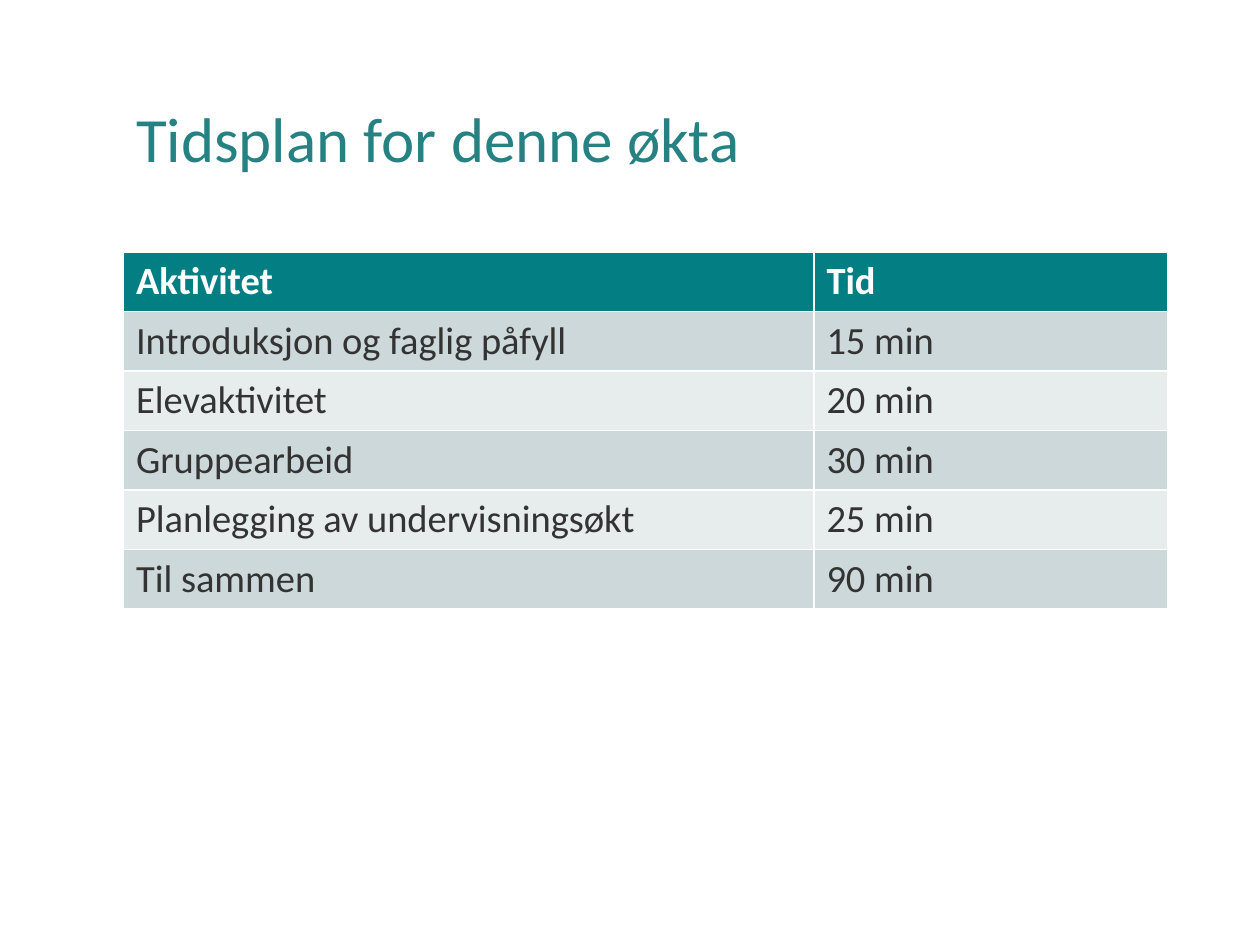
from pptx import Presentation
from pptx.dml.color import RGBColor
from pptx.enum.text import MSO_ANCHOR, PP_ALIGN
from pptx.util import Inches, Pt

LEFT, WIDTH = 0.98, 8.29
COLS = (5.48, 2.81)
ROW = 0.47
HEAD, BANDS = "037F83", ("CCD8D9", "E7ECED")
PLAN = [
    ("Aktivitet", "Tid"),
    ("Introduksjon og faglig påfyll", "15 min"),
    ("Elevaktivitet", "20 min"),
    ("Gruppearbeid", "30 min"),
    ("Planlegging av undervisningsøkt", "25 min"),
    ("Til sammen", "90 min"),
]


def color(code):
    return RGBColor.from_string(code)


def write(frame, text, size=22, ink="333333", bold=False, lines=None):
    """Put formatted, left-aligned text in a frame."""
    para = frame.paragraphs[0]
    para.alignment = PP_ALIGN.LEFT
    para.line_spacing = lines
    run = para.add_run()
    run.text = text
    font = run.font
    font.name, font.size, font.bold = "Calibri", Pt(size), bold
    font.color.rgb = color(ink)


def add_title(slide, text):
    title = slide.shapes.title
    title.left, title.top = Inches(LEFT), Inches(0.4)
    title.width, title.height = Inches(WIDTH), Inches(1.45)
    title.text_frame.vertical_anchor = MSO_ANCHOR.MIDDLE
    write(title.text_frame, text, size=36, ink="268183", lines=0.9)


def add_plan(slide, rows):
    # The default table style draws the white cell borders
    table = slide.shapes.add_table(
        len(rows), len(COLS), Inches(LEFT), Inches(2),
        Inches(WIDTH), Inches(ROW * len(rows))).table
    for col, width in zip(table.columns, COLS):
        col.width = Inches(width)
    for r, row in enumerate(rows):
        head = r == 0
        fill = HEAD if head else BANDS[(r - 1) % 2]
        for c, text in enumerate(row):
            cell = table.cell(r, c)
            cell.fill.solid()
            cell.fill.fore_color.rgb = color(fill)
            write(cell.text_frame, text, bold=head,
                  ink="FFFFFF" if head else "333333")


def main():
    deck = Presentation()
    deck.slide_width, deck.slide_height = Inches(10), Inches(7.5)
    slide = deck.slides.add_slide(deck.slide_layouts[5])  # title only
    add_title(slide, "Tidsplan for denne økta")
    add_plan(slide, PLAN)
    deck.save("out.pptx")


if __name__ == "__main__":
    main()
